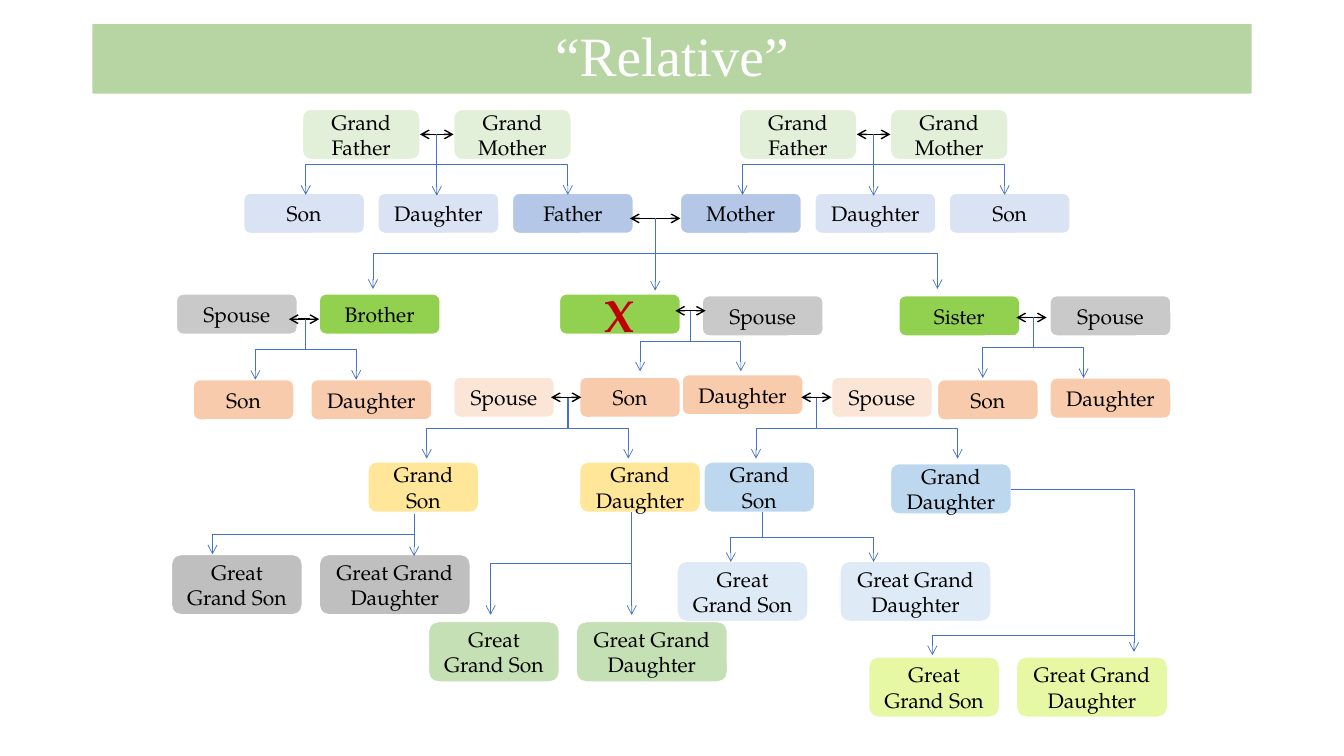
from lxml import etree
from pptx import Presentation
from pptx import util as u
from pptx.dml.color import RGBColor
from pptx.enum import shapes, text
from pptx.oxml import ns

COLORS = {
    "white": "FFFFFF", "black": "000000", "banner": "70AD47", "descent": "4472C4",
    "elder": "E2F0D9", "aunt": "DAE3F3", "parent": "B4C7E7", "sibling": "92D050",
    "inlaw": "C9C9C9", "child": "F8CBAD", "child_inlaw": "FBE5D6", "self": "C00000",
    "yellow": "FFE699", "blue": "BDD7EE", "gray": "BFBFBF", "green": "C5E0B4",
    "pale": "DEEBF7", "lime": "E6F8A4",
}
COLUMNS, ROWS = 160, 90
BODY = {"name": "TeX Gyre Pagella", "size": u.Pt(15), "bold": False}
EGO = {"name": "TeX Gyre Pagella", "size": u.Pt(32), "bold": True}
HEADING = {"name": "Times New Roman", "size": u.Pt(39.6), "bold": False}

deck = Presentation()
deck.slide_width, deck.slide_height = u.Inches(13.33), u.Inches(7.5)
column, row = deck.slide_width / COLUMNS, deck.slide_height / ROWS
slide = deck.slides.add_slide(deck.slide_layouts[6])


def add_card(kind, left, top, width, height, words, fill, font=BODY, ink="black"):
    card = slide.shapes.add_shape(kind, int(left * column), int(top * row),
                                  int(width * column), int(height * row))
    card.shadow.inherit = False
    card.fill.solid()
    card.fill.fore_color.rgb = RGBColor.from_string(COLORS[fill])
    card.line.color.rgb = RGBColor.from_string(COLORS["white"])
    card.line.width = u.Pt(1)
    card.text_frame.word_wrap = True
    card.text_frame.vertical_anchor = text.MSO_ANCHOR.MIDDLE
    line = card.text_frame.paragraphs[0]
    line.alignment = text.PP_ALIGN.CENTER
    label = line.add_run()
    label.text = words
    for key, value in font.items():
        setattr(label.font, key, value)
    label.font.color.rgb = RGBColor.from_string(COLORS[ink])
    return card


def add_link(kind, x1, y1, x2, y2, color="descent", weight=0.5, ends=("tailEnd",)):
    points = (x1 * column, y1 * row, x2 * column, y2 * row)
    link = slide.shapes.add_connector(kind, *(int(point) for point in points))
    link.line.color.rgb = RGBColor.from_string(COLORS[color])
    link.line.width = u.Pt(weight)
    outline = link.line._get_or_add_ln()
    for end in ends:
        etree.SubElement(outline, ns.qn(f"a:{end}"), type="arrow")
    etree.SubElement(link.element.spPr, ns.qn("a:effectLst"))
    return link


ROUND = shapes.MSO_SHAPE.ROUNDED_RECTANGLE
STRAIGHT, ELBOW = shapes.MSO_CONNECTOR.STRAIGHT, shapes.MSO_CONNECTOR.ELBOW

banner = add_card(shapes.MSO_SHAPE.RECTANGLE, 11, 2.88, 138, 8.28, "“Relative”",
                  "banner", HEADING, "white")
banner.line.fill.background()
banner.text_frame.paragraphs[0].line_spacing = 0.9
tint = banner.element.spPr.find(ns.qn("a:solidFill"))[0]
etree.SubElement(tint, ns.qn("a:alpha"), val="50000")

for side in (36, 88):
    for step, elder in enumerate(("Grand Father", "Grand Mother")):
        add_card(ROUND, side + 18 * step, 13, 14, 6, elder, "elder")

for side, names in ((29, ("Son", "Daughter", "Father")), (81, ("Mother", "Daughter", "Son"))):
    for step, name in enumerate(names):
        fill = "parent" if name in ("Father", "Mother") else "aunt"
        add_card(ROUND, side + 16 * step, 23, 14.4, 4.8, name, fill)

relatives = [
    (21, 35, 14.4, "Spouse", "inlaw"),
    (38, 35, 14.4, "Brother", "sibling"),
    (83.6, 35.2, 14.4, "Spouse", "inlaw"),
    (107, 35.2, 14.4, "Sister", "sibling"),
    (125, 35.2, 14.4, "Spouse", "inlaw"),
    (23, 45.2, 12, "Son", "child"),
    (37, 45.2, 14.4, "Daughter", "child"),
    (54, 44.9, 12, "Spouse", "child_inlaw"),
    (69, 44.9, 12, "Son", "child"),
    (81.2, 44.6, 14.4, "Daughter", "child"),
    (99, 44.9, 12, "Spouse", "child_inlaw"),
    (111.6, 45.2, 12, "Son", "child"),
    (125, 45, 14.4, "Daughter", "child"),
]
for left, top, width, name, fill in relatives:
    add_card(ROUND, left, top, width, 4.8, name, fill)
add_card(ROUND, 66.6, 35, 14.4, 4.8, "X", "sibling", EGO, "self")

grandchildren = [
    (43.8, 55, 13.2, "Grand Son", "yellow"),
    (69, 55, 14.4, "Grand Daughter", "yellow"),
    (83.8, 55, 13.2, "Grand Son", "blue"),
    (106, 55.2, 14.4, "Grand Daughter", "blue"),
]
for left, top, width, name, fill in grandchildren:
    add_card(ROUND, left, top, width, 6, name, fill)

great_grandchildren = [
    (20.4, 38, 66, "gray"),
    (51, 68.6, 74, "green"),
    (80.6, 100, 66.8, "pale"),
    (103.4, 121, 78.2, "lime"),
]
for son, daughter, top, fill in great_grandchildren:
    add_card(ROUND, son, top, 15.6, 7.2, "Great Grand Son", fill)
    add_card(ROUND, daughter, top, 18, 7.2, "Great Grand Daughter", fill)

marriages = [
    (50, 54, 16), (102, 106, 16), (75, 81, 26), (80.4, 84, 37),
    (34.4, 38, 38), (121, 124.6, 37.8), (65.6, 69.2, 47.3), (95.4, 99, 47.3),
]
for start, end, height in marriages:
    add_link(STRAIGHT, start, height, end, height, "black", 1, ("headEnd", "tailEnd"))

branches = [
    (52, 16, 23.2, (36.4, 67.6)),
    (104, 16, 23.2, (88.4, 119.6)),
    (78, 26, 34.4, (44.4, 111.6)),
    (82.2, 37, 44.2, (76.2, 88.2)),
    (36.4, 38, 45.2, (30.4, 42.4)),
    (123, 37.8, 45, (117, 129)),
    (67.6, 47.4, 54.6, (50.8, 74.8)),
    (97.2, 47.4, 54.6, (90, 114)),
    (49.3, 61.2, 66, (25.3,)),
    (75.2, 61, 73.2, (58.4,)),
    (135, 73.2, 78, (111,)),
    (90.8, 61, 66.9, (87, 104)),
]
for parent, top, bottom, children in branches:
    for child in children:
        middle, center = (parent + child) / 2, (top + bottom) / 2
        reach, drop = abs(child - parent) / 2, (bottom - top) / 2
        rightward = child > parent
        lean = -drop if rightward else drop
        branch = add_link(ELBOW, middle - lean, center - reach, middle + lean, center + reach)
        turn = 270 if rightward else 90
        branch.element.spPr.find(ns.qn("a:xfrm")).set("rot", str(turn * 60000))

drops = [(52, 19, 23.3), (104, 19, 23.3), (78, 30.2, 34.6),
         (49.3, 61.6, 66.2), (75.2, 61, 73.2), (135, 74, 77.6)]
for parent, top, bottom in drops:
    add_link(STRAIGHT, parent, top, parent, bottom)

corner = add_link(ELBOW, 120.4, 58.2, 135, 73.2, ends=())
corner.element.spPr.find(ns.qn("a:prstGeom")).set("prst", "bentConnector2")

deck.save("out.pptx")
